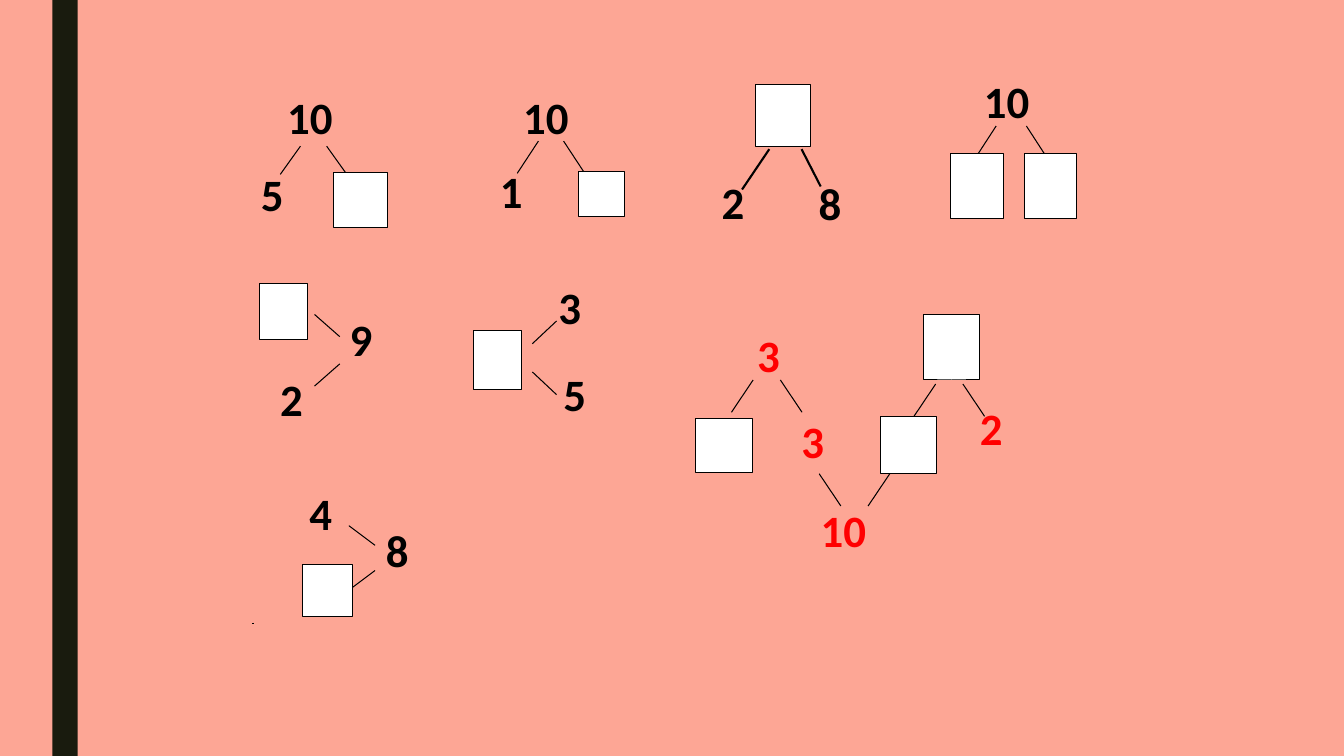
from dataclasses import dataclass

from lxml.etree import SubElement
from pptx import Presentation
from pptx.dml.color import RGBColor
from pptx.enum.shapes import MSO_CONNECTOR, MSO_SHAPE
from pptx.enum.text import PP_ALIGN
from pptx.oxml.ns import qn
from pptx.util import Inches, Pt


@dataclass(frozen=True)
class Theme:
    back: str = "FDA695"
    band: str = "191B0E"
    ink: str = "000000"
    red: str = "FF0000"
    paper: str = "FFFFFF"
    font: str = "Calibri"
    size: int = 32
    thin: float = 0.75
    thick: float = 1.5


class Sheet:
    cols, rows = 1333, 750

    def __init__(self, deck, theme):
        self.theme = theme
        self.col = deck.slide_width / self.cols
        self.row = deck.slide_height / self.rows
        self.slide = deck.slides.add_slide(deck.slide_layouts[6])
        self.shapes = self.slide.shapes
        fill = self.slide.background.fill
        fill.solid()
        fill.fore_color.rgb = RGBColor.from_string(theme.back)

    def place(self, x, y, *more):
        spots = (x, y, *more)
        return [round(n * (self.row if i % 2 else self.col)) for i, n in enumerate(spots)]

    def group(self):
        self.shapes = self.slide.shapes.add_group_shape().shapes

    def block(self, at, color, edge=True):
        shape = self.shapes.add_shape(MSO_SHAPE.RECTANGLE, *self.place(*at))
        shape.shadow.inherit = False
        shape.fill.solid()
        shape.fill.fore_color.rgb = RGBColor.from_string(color)
        if edge:
            shape.line.color.rgb = RGBColor.from_string(self.theme.ink)
            shape.line.width = Pt(self.theme.thin)
        else:
            shape.line.fill.background()

    def digit(self, text, at, color):
        frame = self.shapes.add_textbox(*self.place(*at)).text_frame
        frame.word_wrap = True
        para = frame.paragraphs[0]
        para.text = text
        para.alignment = PP_ALIGN.JUSTIFY
        para.font.name = self.theme.font
        para.font.size = Pt(self.theme.size)
        para.font.bold = True
        para.font.color.rgb = RGBColor.from_string(color)

    def stroke(self, ends, width):
        line = self.shapes.add_connector(MSO_CONNECTOR.STRAIGHT, *self.place(*ends))
        line.line.color.rgb = RGBColor.from_string(self.theme.ink)
        line.line.width = Pt(width)
        SubElement(line._element.spPr, qn("a:effectLst"))

    def fork(self, x, y, gap, run, drop, side=False):
        for sign in (-1, 1):
            if side:
                ends = (x, y + sign * gap, x + run, y + sign * (gap + drop))
            else:
                ends = (x + sign * gap, y, x + sign * (gap + run), y + drop)
            self.stroke(ends, self.theme.thin)

    def bond(self, forks, size, digits, boxes, color, lines=()):
        self.group()
        for fork in forks:
            self.fork(*fork)
        for ends in lines:
            self.stroke(ends, self.theme.thick)
        for text, x, y in digits:
            self.digit(text, (x, y, *size), color)
        for box in boxes:
            self.block(box, self.theme.paper)


def main():
    deck = Presentation()
    deck.slide_width, deck.slide_height = Inches(13.33), Inches(7.5)
    theme = Theme()
    sheet = Sheet(deck, theme)
    sheet.block((52, 0, 25, sheet.rows), theme.band, edge=False)

    sheet.bond([(311, 145, 13, 20, 28)], (93, 73),
               [("10", 275, 84), ("5", 249, 160)],
               [(331, 171, 53, 55)], theme.ink)
    sheet.bond([(546.5, 140, 12.5, 21, 32)], (94, 83),
               [("10", 509, 84), ("1", 486, 158)],
               [(574, 170, 45, 45)], theme.ink)
    sheet.bond([], (70, 62),
               [("8", 802, 169), ("2", 706, 168)],
               [(749, 84, 55, 61)], theme.ink,
               [(763, 148, 736, 188), (795, 148, 814, 185)])
    sheet.bond([(1003, 125, 15, 24, 37)], (87, 71),
               [("10", 966, 68)],
               [(1016, 152, 52, 65), (943, 152, 52, 65)], theme.ink)
    sheet.bond([(337, 347.5, 13.5, -25, 22, True)], (85, 74),
               [("9", 337, 304), ("2", 268, 364)],
               [(257, 281, 48, 56)], theme.ink)
    sheet.bond([(528, 355, 14, 24, 22.5, True)], (83, 78),
               [("3", 544, 273), ("5", 549, 359)],
               [(470, 328, 47, 58)], theme.ink)
    sheet.bond([(372, 553.5, 12.5, -26, 19.5, True)], (89, 69),
               [("8", 373, 514), ("4", 297, 477)],
               [(300, 560, 50, 52)], theme.ink)
    sheet.bond([(760.5, 377, 13.5, 21.5, 32),
                (847.5, 502, 13.5, 21.5, -32),
                (941.5, 381, 13.5, 21.5, 32)], (98, 86),
               [("3", 741, 320), ("3", 785, 406), ("10", 804, 494), ("2", 962, 393)],
               [(690, 415, 56, 54), (873, 413, 56, 57), (916, 312, 56, 65)], theme.red)

    sheet.shapes = sheet.slide.shapes
    sheet.stroke((251, 618, 251, 619), theme.thick)
    deck.save("out.pptx")


if __name__ == "__main__":
    main()
